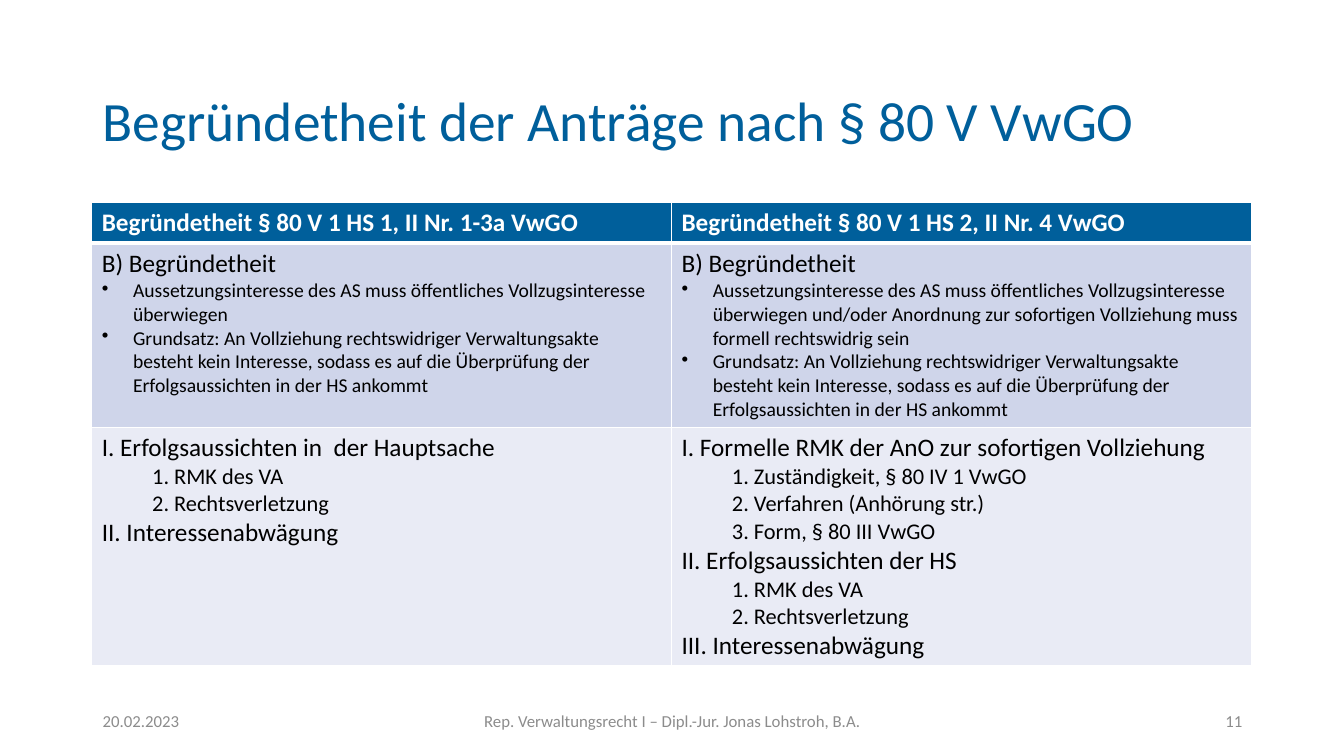
"""Build the slide comparing the merits of applications under § 80 V VwGO."""
from dataclasses import dataclass

from lxml import etree
from pptx import Presentation
from pptx.dml.color import RGBColor
from pptx.enum.text import MSO_ANCHOR, PP_ALIGN
from pptx.oxml.ns import qn
from pptx.util import Inches, Pt


@dataclass(frozen=True)
class Theme:
    font: str = "Calibri"
    blue: str = "005F9B"
    white: str = "FFFFFF"
    black: str = "000000"
    gray: str = "8C8C8C"
    row_fills: tuple = ("005F9B", "CFD5EA", "E9EBF5")
    title_size: float = 39.6
    point_size: int = 18
    sub_size: int = 16
    bullet_size: int = 14
    footer_size: int = 12


theme = Theme()


def style_font(paragraph, size, color, bold=False):
    paragraph.font.name = theme.font
    paragraph.font.size = Pt(size)
    paragraph.font.bold = bold
    paragraph.font.color.rgb = RGBColor.from_string(color)


def add_text(left, top, width, height, text, size, color, align):
    frame = slide.shapes.add_textbox(
        Inches(left), Inches(top), Inches(width), Inches(height)).text_frame
    frame.word_wrap = True
    frame.vertical_anchor = MSO_ANCHOR.MIDDLE
    paragraph = frame.paragraphs[0]
    paragraph.text = text
    paragraph.alignment = align
    style_font(paragraph, size, color)
    return paragraph


presentation = Presentation()
presentation.slide_width = Inches(13.33)
presentation.slide_height = Inches(7.5)
slide = presentation.slides.add_slide(presentation.slide_layouts[6])

title = add_text(0.92, 0.61, 11.5, 1.23, "Begründetheit der Anträge nach § 80 V VwGO",
                 theme.title_size, theme.blue, PP_ALIGN.LEFT)
title.line_spacing = 0.9

principle = ("Grundsatz: An Vollziehung rechtswidriger Verwaltungsakte besteht kein Interesse, "
             "sodass es auf die Überprüfung der Erfolgsaussichten in der HS ankommt")
interest = "Aussetzungsinteresse des AS muss öffentliches Vollzugsinteresse überwiegen"
merits = [("sub", "1. RMK des VA"), ("sub", "2. Rechtsverletzung")]
rows = [
    [
        [("header", "Begründetheit § 80 V 1 HS 1, II Nr. 1-3a VwGO")],
        [("header", "Begründetheit § 80 V 1 HS 2, II Nr. 4 VwGO")],
    ],
    [
        [("point", "B) Begründetheit"), ("bullet", interest), ("bullet", principle)],
        [
            ("point", "B) Begründetheit"),
            ("bullet", interest + " und/oder Anordnung zur sofortigen Vollziehung "
                                  "muss formell rechtswidrig sein"),
            ("bullet", principle),
        ],
    ],
    [
        [
            ("point", "I. Erfolgsaussichten in  der Hauptsache"),
            *merits,
            ("point", "II. Interessenabwägung"),
        ],
        [
            ("point", "I. Formelle RMK der AnO zur sofortigen Vollziehung"),
            ("sub", "1. Zuständigkeit, § 80 IV 1 VwGO"),
            ("sub", "2. Verfahren (Anhörung str.)"),
            ("sub", "3. Form, § 80 III VwGO"),
            ("point", "II. Erfolgsaussichten der HS"),
            *merits,
            ("point", "III. Interessenabwägung"),
        ],
    ],
]
text_styles = {
    "header": (theme.point_size, theme.white, True),
    "point": (theme.point_size, theme.black),
    "sub": (theme.sub_size, theme.black),
    "bullet": (theme.bullet_size, theme.black),
}
row_heights = [0.4, 1.83, 2.36]

table = slide.shapes.add_table(
    len(rows), 2, Inches(0.91), Inches(2.01), Inches(11.5), Inches(sum(row_heights))).table
for column in table.columns:
    column.width = Inches(5.75)

for row_index, (row, height) in enumerate(zip(rows, row_heights)):
    table.rows[row_index].height = Inches(height)
    for column_index, entries in enumerate(row):
        cell = table.cell(row_index, column_index)
        cell.fill.solid()
        cell.fill.fore_color.rgb = RGBColor.from_string(theme.row_fills[row_index])
        cell.text_frame.text = "\n".join(text for kind, text in entries)
        for paragraph, (kind, text) in zip(cell.text_frame.paragraphs, entries):
            style_font(paragraph, *text_styles[kind])
            properties = paragraph._p.get_or_add_pPr()
            if kind == "sub":
                paragraph.level = 1
                properties.set("marL", str(Inches(0.5)))
            elif kind == "bullet":
                properties.set("marL", str(Inches(0.31)))
                properties.set("indent", str(-Inches(0.31)))
                bullet = etree.Element(qn("a:buChar"), char="•")
                properties.find(qn("a:defRPr")).addprevious(bullet)

        cell_properties = cell._tc.get_or_add_tcPr()
        for position, side in enumerate(("lnL", "lnR", "lnT", "lnB")):
            thick = (row_index, side) in ((0, "lnB"), (1, "lnT"))
            border = etree.Element(qn(f"a:{side}"), w=str(Pt(3 if thick else 1)))
            border_fill = etree.SubElement(border, qn("a:solidFill"))
            etree.SubElement(border_fill, qn("a:srgbClr"), val=theme.white)
            cell_properties.insert(position, border)

footers = [
    (0.92, 3, "20.02.2023", PP_ALIGN.LEFT),
    (4.42, 4.5, "Rep. Verwaltungsrecht I – Dipl.-Jur. Jonas Lohstroh, B.A.", PP_ALIGN.CENTER),
    (9.42, 3, "11", PP_ALIGN.RIGHT),
]
for left, width, text, align in footers:
    add_text(left, 6.95, width, 0.4, text, theme.footer_size, theme.gray, align)

presentation.save("out.pptx")
